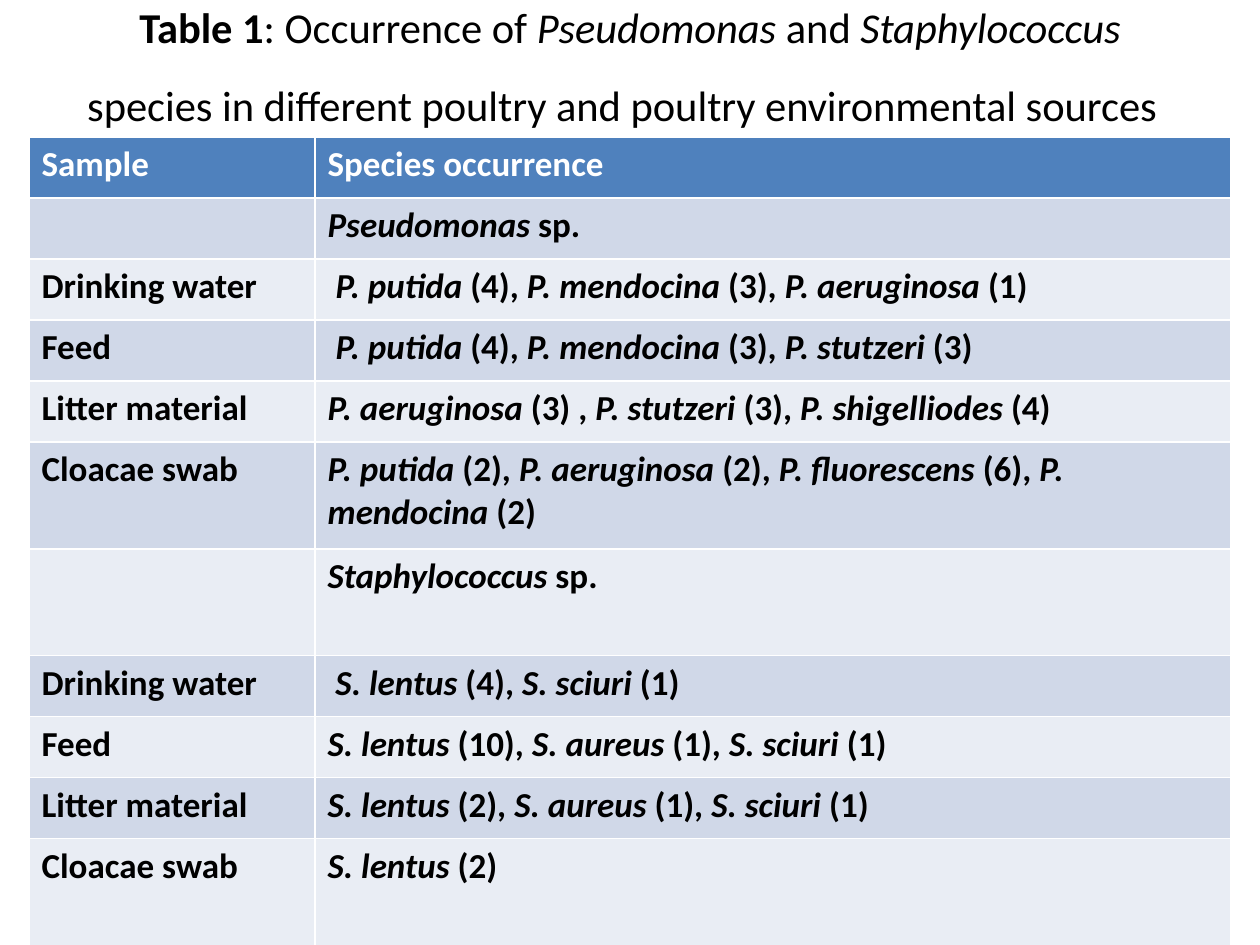
from pptx import Presentation
from pptx.dml.color import RGBColor
from pptx.enum.text import MSO_ANCHOR, MSO_AUTO_SIZE, PP_ALIGN
from pptx.util import Pt

MIDDLE, CENTER, NO_FIT = MSO_ANCHOR.MIDDLE, PP_ALIGN.CENTER, MSO_AUTO_SIZE.NONE
PX = 914400 // 126
FONT = "Calibri"
TITLE_ONLY = 5
COLORS = {"header": "4F81BD", "odd": "D0D8E8", "even": "E9EDF4",
          "text": "000000", "header_text": "FFFFFF"}
TITLE_BOX = (63, 29, 1134, 79)
TABLE_BOX = (29, 137, 1202, 809)
SAMPLE_WIDTH = 286
ROW_HEIGHT, TALL_HEIGHT = 61, 107
TALL_ROWS = (5, 6, 10)

TITLE_LABEL = "Table 1"
TITLE_TEXT = (": Occurrence of *Pseudomonas* and *Staphylococcus*"
              " species in different poultry and poultry environmental sources")
ROWS = [
    ("Sample", "Species occurrence"),
    ("", "*Pseudomonas* sp."),
    ("Drinking water", " *P. putida* (4), *P. mendocina* (3), *P. aeruginosa* (1)"),
    ("Feed", " *P. putida* (4), *P. mendocina* (3), *P. stutzeri* (3)"),
    ("Litter material", "*P. aeruginosa* (3) , *P. stutzeri* (3), *P. shigelliodes* (4)"),
    ("Cloacae swab", "*P. putida* (2), *P. aeruginosa *(2),* P. fluorescens *(6), *P. mendocina* (2)"),
    ("", "*Staphylococcus* sp."),
    ("Drinking water", "* S. lentus* (4), *S. sciuri* (1)"),
    ("Feed", "*S. lentus* (10), *S. aureus* (1), *S. sciuri* (1)"),
    ("Litter material", "*S. lentus* (2), *S. aureus* (1), *S. sciuri* (1)"),
    ("Cloacae swab", "*S. lentus* (2)"),
]


def color(name):
    """Return the named palette colour."""
    return RGBColor.from_string(COLORS[name])


def style_font(font, size, tint, bold):
    """Give a font its face, size, colour and weight."""
    font.name, font.size, font.bold = FONT, Pt(size), bold
    font.color.rgb = color(tint)


def add_spans(para, marked_text):
    """Add runs to a paragraph, with text between asterisks in italics."""
    for index, piece in enumerate(marked_text.split("*")):
        if piece:
            span = para.add_run()
            span.text = piece
            span.font.italic = index % 2 == 1


def add_title(page, box):
    """Fill and place the title placeholder."""
    title = page.shapes.title
    title.left, title.top, title.width, title.height = (side * PX for side in box)
    frame = title.text_frame
    frame.word_wrap, frame.auto_size, frame.vertical_anchor = True, NO_FIT, MIDDLE
    para = frame.paragraphs[0]
    para.alignment = CENTER
    style_font(para.font, 24.3, "text", False)
    label = para.add_run()
    label.text, label.font.bold = TITLE_LABEL, True
    add_spans(para, TITLE_TEXT)
    tail = para.add_run()
    tail.text, tail.font.size = " ", Pt(39.6)


def add_species_table(page, box):
    """Build the table of species found in each sample."""
    frame = page.shapes.add_table(len(ROWS), 2, *(side * PX for side in box))
    table = frame.table
    table.columns[0].width = SAMPLE_WIDTH * PX
    table.columns[1].width = (box[2] - SAMPLE_WIDTH) * PX
    for number, texts in enumerate(ROWS):
        table.rows[number].height = (TALL_HEIGHT if number in TALL_ROWS else ROW_HEIGHT) * PX
        band = "odd" if number % 2 else "even"
        fill, tint = (band, "text") if number else ("header", "header_text")
        for column, text in enumerate(texts):
            cell = table.cell(number, column)
            cell.fill.solid()
            cell.fill.fore_color.rgb = color(fill)
            para = cell.text_frame.paragraphs[0]
            style_font(para.font, 20, tint, True)
            add_spans(para, text)


def main():
    """Build and save the deck."""
    deck = Presentation()
    deck.slide_width, deck.slide_height = 1260 * PX, 945 * PX
    page = deck.slides.add_slide(deck.slide_layouts[TITLE_ONLY])
    add_title(page, TITLE_BOX)
    add_species_table(page, TABLE_BOX)
    deck.save("out.pptx")


if __name__ == "__main__":
    main()
